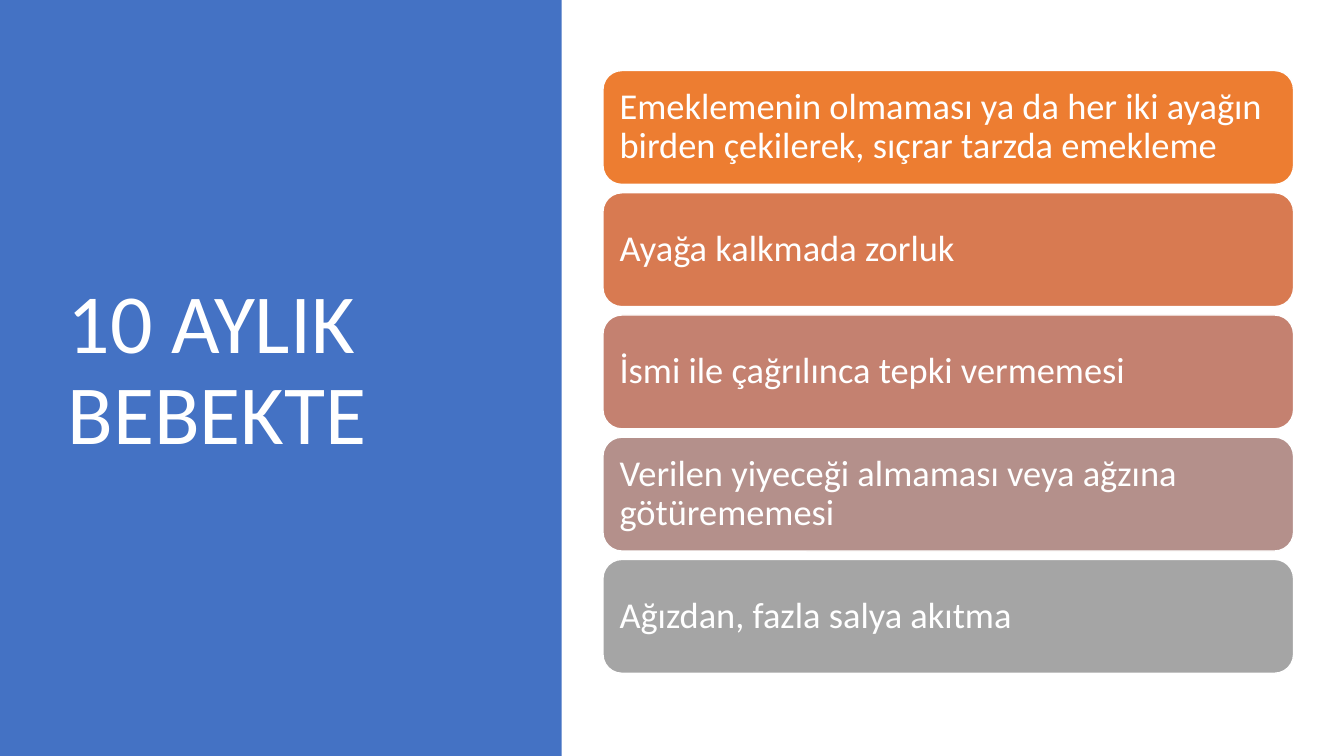
from pptx import Presentation
from pptx.dml.color import RGBColor
from pptx.enum.shapes import MSO_SHAPE
from pptx.enum.text import MSO_ANCHOR, MSO_AUTO_SIZE, PP_ALIGN
from pptx.util import Inches, Pt

RECT = MSO_SHAPE.RECTANGLE
ROUNDED = MSO_SHAPE.ROUNDED_RECTANGLE
MIDDLE = MSO_ANCHOR.MIDDLE
LEFT = PP_ALIGN.LEFT
NO_AUTOFIT = MSO_AUTO_SIZE.NONE

WHITE = RGBColor(0xFF, 0xFF, 0xFF)
BLUE = RGBColor(0x44, 0x72, 0xC4)
FONT = "Calibri"

TITLE = "10 AYLIK BEBEKTE"
SIGNS = [
    ("Emeklemenin olmaması ya da her iki ayağın birden çekilerek, sıçrar tarzda emekleme",
     RGBColor(0xED, 0x7D, 0x31)),
    ("Ayağa kalkmada zorluk", RGBColor(0xD8, 0x7A, 0x51)),
    ("İsmi ile çağrılınca tepki vermemesi", RGBColor(0xC4, 0x81, 0x70)),
    ("Verilen yiyeceği almaması veya ağzına götürememesi", RGBColor(0xB4, 0x90, 0x8B)),
    ("Ağızdan, fazla salya akıtma", RGBColor(0xA5, 0xA5, 0xA5)),
]
CARD_TOP = 0.7
CARD_PITCH = 1.2125


def set_text(shape, text, size):
    """Write white, left-aligned, vertically centred text into a shape."""
    tf = shape.text_frame
    tf.text = text
    tf.word_wrap = True
    tf.auto_size = NO_AUTOFIT
    tf.vertical_anchor = MIDDLE
    p = tf.paragraphs[0]
    p.alignment = LEFT
    p.line_spacing = 0.9
    p.font.name = FONT
    p.font.size = Pt(size)
    p.font.color.rgb = WHITE
    return tf


def add_filled(s, kind, left, top, width, height, color):
    """Add a flat, solid shape without an outline."""
    shape = s.shapes.add_shape(kind, Inches(left), Inches(top), Inches(width), Inches(height))
    shape.shadow.inherit = False
    shape.fill.solid()
    shape.fill.fore_color.rgb = color
    shape.line.fill.background()
    return shape


def add_title(s):
    """Place the title on the blue side panel."""
    title = s.shapes.title
    title.left, title.top = Inches(0.57), Inches(0.68)
    title.width, title.height = Inches(4.16), Inches(6.02)
    set_text(title, TITLE, 60)
    panel = add_filled(s, RECT, 0, 0, 5.57, 7.5, BLUE)
    title.element.addprevious(panel.element)


def add_card(s, top, text, color):
    """Add one rounded card with its sentence."""
    card = add_filled(s, ROUNDED, 5.98, top, 6.85, 1.13, color)
    card.line.color.rgb = WHITE
    card.line.width = Pt(1)
    tf = set_text(card, text, 26)
    tf.margin_left = tf.margin_right = Inches(0.11)
    tf.margin_top = tf.margin_bottom = Inches(0.11)


def main():
    """Build and save the slide."""
    prs = Presentation()
    prs.slide_width, prs.slide_height = Inches(13.33), Inches(7.5)
    s = prs.slides.add_slide(prs.slide_layouts[5])
    add_title(s)
    for i, (text, color) in enumerate(SIGNS):
        add_card(s, CARD_TOP + i * CARD_PITCH, text, color)
    prs.save("out.pptx")


if __name__ == "__main__":
    main()
